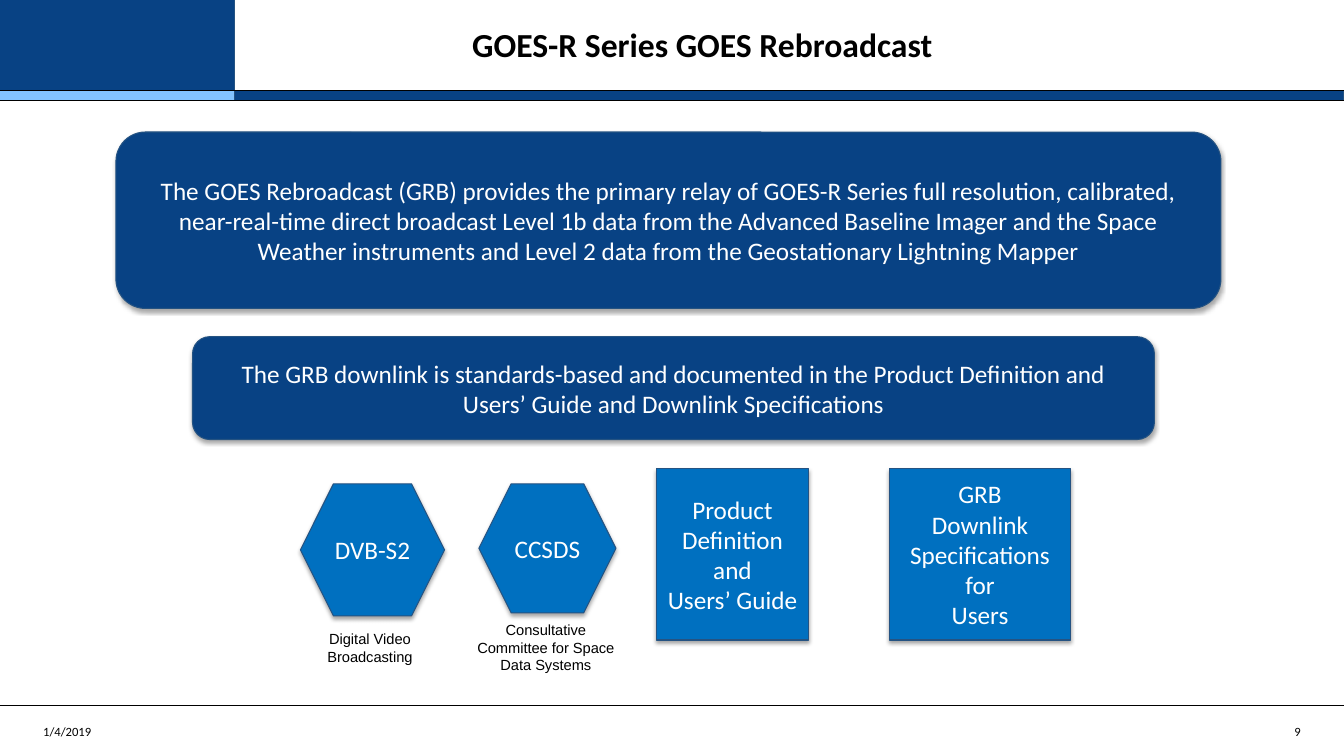
from dataclasses import dataclass
from lxml import etree
from pptx import Presentation
from pptx.dml.color import RGBColor
from pptx.enum.shapes import MSO_CONNECTOR, MSO_SHAPE
from pptx.enum.text import MSO_ANCHOR, PP_ALIGN
from pptx.oxml import parse_xml
from pptx.oxml.ns import nsdecls, qn
from pptx.util import Inches, Pt

RECT, ROUNDED, HEXAGON = MSO_SHAPE.RECTANGLE, MSO_SHAPE.ROUNDED_RECTANGLE, MSO_SHAPE.HEXAGON
LEFT, CENTER, RIGHT = PP_ALIGN.LEFT, PP_ALIGN.CENTER, PP_ALIGN.RIGHT
TOP, MIDDLE = MSO_ANCHOR.TOP, MSO_ANCHOR.MIDDLE
STRAIGHT = MSO_CONNECTOR.STRAIGHT


@dataclass(frozen=True)
class Theme:
    navy: str = "084284"
    sky: str = "82C3FF"
    blue: str = "0070C0"
    edge: str = "255382"
    black: str = "000000"
    white: str = "FFFFFF"
    main_font: str = "Calibri"
    caption_font: str = "Arial"
    title_size: float = 24
    body_size: float = 18
    caption_size: float = 10.5
    footer_size: float = 9


THEME = Theme()
WIDTH, HEIGHT = 13.33, 7.5

# Header band, stripe and footer measures
CORNER_WIDTH, STRIPE_TOP, STRIPE_BOTTOM, FOOTER_RULE = 2.33, 0.9, 1, 7
HEXAGON_TOP, BOX_TOP, BOX_HEIGHT = 4.8, 4.65, 1.7
FOOTER_TOP, FOOTER_WIDTH, FOOTER_HEIGHT, FOOTER_MARGIN = 7.06, 2.54, 0.4, 0.33

TITLE = "GOES-R Series GOES Rebroadcast"
BLOCKS = [  # outline, fill, (left, top, width, height), text
    (ROUNDED, THEME.navy, (1.15, 1.31, 10.96, 1.75),
     "The GOES Rebroadcast (GRB) provides the primary relay of GOES-R Series full resolution, "
     "calibrated, near-real-time direct broadcast Level 1b data from the Advanced Baseline Imager "
     "and the Space Weather instruments and Level 2 data from the Geostationary Lightning Mapper"),
    (ROUNDED, THEME.navy, (1.91, 3.34, 9.54, 1.02),
     "The GRB downlink is standards-based and documented in the Product Definition and "
     "Users’ Guide and Downlink Specifications"),
    (HEXAGON, THEME.blue, (2.98, HEXAGON_TOP, 1.43, 1.31), "DVB-S2"),
    (HEXAGON, THEME.blue, (4.75, HEXAGON_TOP, 1.36, 1.28), "CCSDS"),
    (RECT, THEME.blue, (6.51, BOX_TOP, 1.51, BOX_HEIGHT), "Product Definition and\nUsers’ Guide"),
    (RECT, THEME.blue, (8.82, BOX_TOP, 1.8, BOX_HEIGHT),
     "GRB\nDownlink Specifications for\nUsers"),
]
CAPTIONS = [
    ((4.6, 6.11, 1.63, 0.63), "Consultative Committee for Space Data Systems"),
    ((3.1, 6.2, 1.14, 0.45), "Digital Video Broadcasting"),
]
FOOTERS = [  # left, alignment, text
    (WIDTH - FOOTER_MARGIN - FOOTER_WIDTH, RIGHT, "9"),
    (FOOTER_MARGIN, LEFT, "1/4/2019"),
]


def color(value):
    return RGBColor.from_string(value)


def inches(values):
    return [Inches(value) for value in values]


def write(shape, text, size, ink=THEME.black, font=THEME.main_font,
          align=CENTER, anchor=MIDDLE, bold=False):
    frame = shape.text_frame
    frame.word_wrap = True
    frame.vertical_anchor = anchor
    frame.text = text
    for para in frame.paragraphs:
        para.alignment = align
        for span in para.runs:
            span.font.name = font
            span.font.size = Pt(size)
            span.font.bold = bold
            span.font.color.rgb = color(ink)


def add_block(page, outline, area, fill):
    shape = page.shapes.add_shape(outline, *inches(area))
    shape.shadow.inherit = False
    shape.fill.solid()
    shape.fill.fore_color.rgb = color(fill)
    shape.line.color.rgb = color(THEME.edge)
    shape.line.width = Pt(0.75)
    return shape


def add_soft_shadow(shape):
    effects = shape._element.spPr.find(qn("a:effectLst"))
    effects.append(parse_xml(
        f'<a:outerShdw {nsdecls("a")} blurRad="{Pt(3.1)}" dist="{Pt(1.8)}" dir="5400000" '
        f'rotWithShape="0"><a:srgbClr val="{THEME.black}"><a:alpha val="35000"/></a:srgbClr>'
        '</a:outerShdw>'))


def add_rule(page, top):
    rule = page.shapes.add_connector(STRAIGHT, *inches((0, top, WIDTH, top)))
    rule.line.color.rgb = color(THEME.black)
    rule.line.width = Pt(1)
    etree.SubElement(rule._element.spPr, qn("a:effectLst"))


def add_header(page):
    stripe = STRIPE_BOTTOM - STRIPE_TOP
    add_block(page, RECT, (0, 0, CORNER_WIDTH, STRIPE_TOP), THEME.navy)
    add_block(page, RECT, (CORNER_WIDTH, STRIPE_TOP, WIDTH - CORNER_WIDTH, stripe), THEME.navy)
    add_block(page, RECT, (0, STRIPE_TOP, CORNER_WIDTH, stripe), THEME.sky)
    for top in (STRIPE_BOTTOM, STRIPE_TOP, FOOTER_RULE):
        add_rule(page, top)
    title = page.shapes.title
    title.left, title.top, title.width, title.height = inches((3.59, 0.14, 6.75, 0.65))
    write(title, TITLE, THEME.title_size, bold=True)
    title.text_frame.paragraphs[0].line_spacing = 0.9


def main():
    deck = Presentation()
    deck.slide_width, deck.slide_height = inches((WIDTH, HEIGHT))
    page = deck.slides.add_slide(deck.slide_layouts.get_by_name("Title Only"))
    add_header(page)
    for outline, fill, area, text in BLOCKS:
        block = add_block(page, outline, area, fill)
        add_soft_shadow(block)
        write(block, text, THEME.body_size, THEME.white)
    for area, text in CAPTIONS:
        box = page.shapes.add_textbox(*inches(area))
        write(box, text, THEME.caption_size, font=THEME.caption_font, anchor=TOP)
    for left, align, text in FOOTERS:
        box = page.shapes.add_textbox(*inches((left, FOOTER_TOP, FOOTER_WIDTH, FOOTER_HEIGHT)))
        write(box, text, THEME.footer_size, align=align)
    deck.save("out.pptx")


if __name__ == "__main__":
    main()
